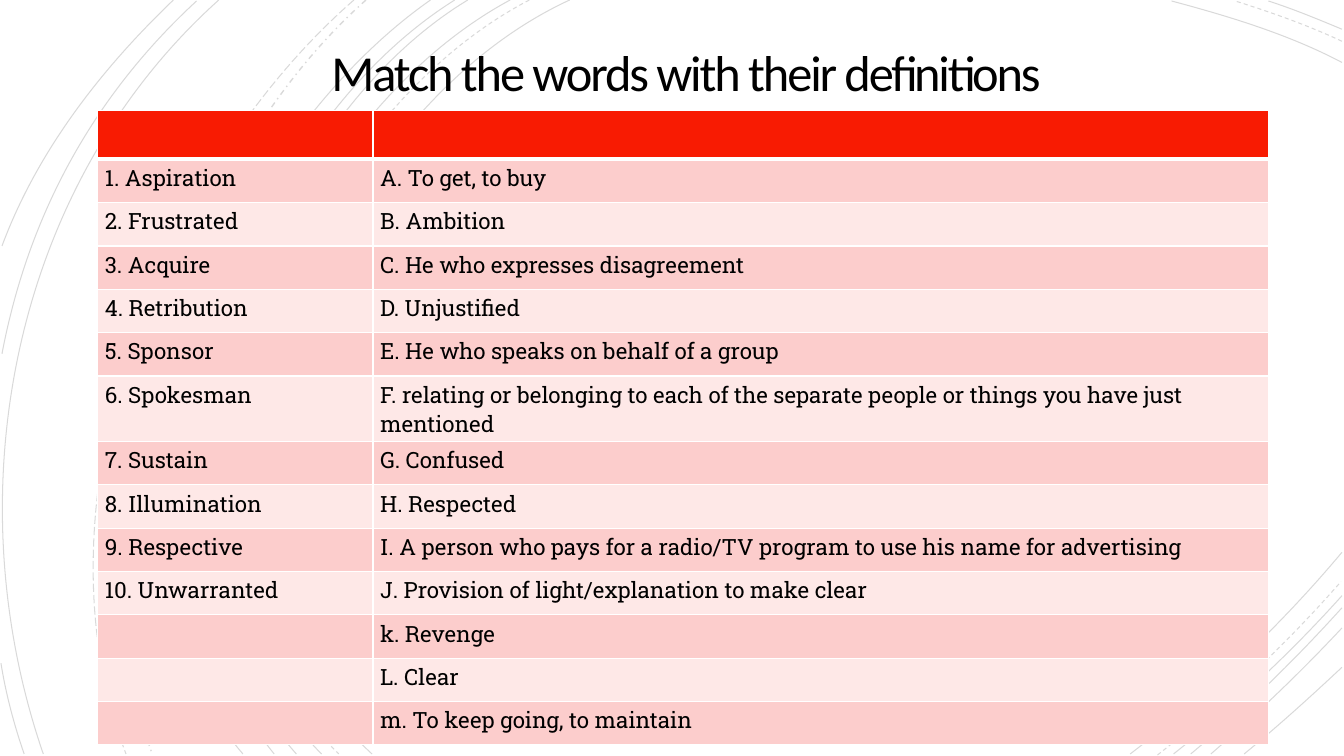
import pptx
import pptx.dml.color
import pptx.enum.dml
import pptx.enum.shapes
import pptx.enum.text
import pptx.oxml
import pptx.oxml.ns
import pptx.util

TITLE = "Match the words with their definitions"
WORDS = ["Aspiration", "Frustrated", "Acquire", "Retribution", "Sponsor",
         "Spokesman", "Sustain", "Illumination", "Respective", "Unwarranted"]
DEFINITIONS = [
    "A. To get, to buy",
    "B. Ambition",
    "C. He who expresses disagreement",
    "D. Unjustified",
    "E. He who speaks on behalf of a group",
    "F. relating or belonging to each of the separate people or things you have just mentioned",
    "G. Confused",
    "H. Respected",
    "I. A person who pays for a radio/TV program to use his name for advertising",
    "J. Provision of light/explanation to make clear",
    "k. Revenge",
    "L. Clear",
    "m. To keep going, to maintain",
]

# Background arcs by dash style: start, two control points and end, in px
ARCS = {
    "SOLID": [
        ((565, 0), (315, 115), (143, 540), (369, 748)),
        ((1331, 62), (1278, 34), (1218, 16), (1162, 1)),
        ((1121, 748), (1197, 690), (1269, 622), (1331, 548)),
        ((506, 0), (270, 127), (110, 537), (319, 748)),
        ((1331, 29), (1307, 19), (1283, 9), (1258, 1)),
        ((1164, 748), (1223, 701), (1280, 648), (1331, 591)),
        ((464, 0), (244, 133), (110, 541), (294, 748)),
        ((1181, 748), (1234, 704), (1284, 655), (1331, 603)),
        ((451, 0), (231, 138), (97, 533), (272, 748)),
        ((1201, 748), (1246, 709), (1290, 667), (1331, 623)),
        ((427, 0), (217, 147), (53, 529), (241, 748)),
        ((1234, 748), (1267, 721), (1299, 692), (1331, 662)),
        ((217, 0), (11, 185), (-46, 490), (43, 748)),
        ((195, 1), (92, 96), (28, 214), (2, 351)),
        ((1, 658), (6, 689), (14, 719), (24, 748)),
        ((172, 0), (100, 69), (37, 150), (2, 244)),
    ],
    "DASH": [
        ((525, 0), (285, 125), (123, 537), (336, 748)),
        ((1331, 41), (1297, 25), (1260, 12), (1225, 1)),
        ((1148, 749), (1213, 698), (1275, 640), (1330, 577)),
    ],
    "DASH_DOT": [((363, 0), (176, 166), (65, 509), (151, 748))],
    "LONG_DASH": [((351, 0), (157, 169), (29, 499), (125, 748))],
}
ARC_OPACITY = 15

PX = 9144  # 100 px to the inch
PAGE_SIZE = (1333, 750)
TITLE_BOX = (206, 48, 949, 55)
TABLE_AT = (97, 110)
COLUMN_WIDTHS = (273, 888)
HEADER_HEIGHT, ROW_HEIGHT, TWO_LINE_HEIGHT = 48, 43, 65
LINE_LENGTH = 80  # characters that fit on one line of a definition
MARGINS = {"margin_left": 7, "margin_top": 4, "margin_right": 7, "margin_bottom": 4}
BLACK, WHITE, HEADER_RED = "000000", "FFFFFF", "F81B02"
BANDS = ("FCCDCC", "FEE8E7")
TITLE_FONT = {"name": "Calibri", "size": pptx.util.Pt(36)}
CELL_FONT = {"name": "Roboto Slab", "size": pptx.util.Pt(16)}


def px(length):
    return pptx.util.Emu(length * PX)


def color(hex_text):
    return pptx.dml.color.RGBColor.from_string(hex_text)


def set_all(target, values):
    for name, value in values.items():
        setattr(target, name, value)


def write(para, text, font):
    span = para.add_run()
    span.text = text
    set_all(span.font, font)
    span.font.color.rgb = color(BLACK)
    return span


def add_backdrop(page):
    backdrop = page.shapes.add_shape(
        pptx.enum.shapes.MSO_SHAPE.RECTANGLE, 0, 0, *map(px, PAGE_SIZE))
    backdrop.shadow.inherit = False
    backdrop.fill.solid()
    backdrop.fill.fore_color.rgb = color(WHITE)
    backdrop.line.fill.background()


def draw_arc(page, corners, dash):
    start, *rest = corners
    builder = page.shapes.build_freeform(*start, scale=PX)
    builder.add_line_segments(rest, close=False)
    arc = builder.convert_to_shape()
    # Turn the three straight segments into one cubic curve
    outline = arc._element.find(".//" + pptx.oxml.ns.qn("a:path"))
    curve = pptx.oxml.parse_xml(f'<a:cubicBezTo {pptx.oxml.ns.nsdecls("a")}/>')
    for segment in outline.findall(pptx.oxml.ns.qn("a:lnTo")):
        curve.append(segment[0])
        outline.remove(segment)
    outline.append(curve)

    arc.shadow.inherit = False
    arc.fill.background()
    arc.line.color.rgb = color(BLACK)
    set_all(arc.line, {
        "width": pptx.util.Pt(1 if dash == "DASH_DOT" else 0.75),
        "dash_style": pptx.enum.dml.MSO_LINE[dash],
    })
    ink = arc._element.spPr.find(".//" + pptx.oxml.ns.qn("a:srgbClr"))
    ink.append(pptx.oxml.parse_xml(
        f'<a:alpha {pptx.oxml.ns.nsdecls("a")} val="{ARC_OPACITY * 1000}"/>'))


def set_borders(cell, widths):
    """Give white borders; widths in points are for left, right, top, bottom."""
    properties = cell._tc.get_or_add_tcPr()
    for index, (side, width) in enumerate(zip("LRTB", widths)):
        properties.insert(index, pptx.oxml.parse_xml(
            f'<a:ln{side} {pptx.oxml.ns.nsdecls("a")} w="{pptx.util.Pt(width)}">'
            f'<a:solidFill><a:srgbClr val="{WHITE}"/></a:solidFill></a:ln{side}>'))


def add_title(page):
    box = page.shapes.add_textbox(*map(px, TITLE_BOX))
    set_all(box.text_frame, {
        "word_wrap": True, "margin_top": 0, "margin_bottom": 0,
        "vertical_anchor": pptx.enum.text.MSO_ANCHOR.MIDDLE,
    })
    para = box.text_frame.paragraphs[0]
    set_all(para, {"alignment": pptx.enum.text.PP_ALIGN.CENTER, "line_spacing": 0.85})
    span = write(para, TITLE, TITLE_FONT)
    span.font._element.set("spc", "-150")


def add_word_table(page):
    numbered = [f"{number}. {word}" for number, word in enumerate(WORDS, 1)]
    numbered += [""] * (len(DEFINITIONS) - len(WORDS))
    rows = [("", "")] + list(zip(numbered, DEFINITIONS))
    heights = [HEADER_HEIGHT] + [
        TWO_LINE_HEIGHT if len(text) > LINE_LENGTH else ROW_HEIGHT for text in DEFINITIONS]
    table = page.shapes.add_table(
        len(rows), len(COLUMN_WIDTHS),
        *map(px, (*TABLE_AT, sum(COLUMN_WIDTHS), sum(heights)))).table
    for column, width in zip(table.columns, COLUMN_WIDTHS):
        column.width = px(width)
    for r, texts in enumerate(rows):
        table.rows[r].height = px(heights[r])
        for c, text in enumerate(texts):
            cell = table.cell(r, c)
            set_all(cell, {name: px(value) for name, value in MARGINS.items()})
            cell.fill.solid()
            cell.fill.fore_color.rgb = color(BANDS[(r - 1) % 2] if r else HEADER_RED)
            # A thick rule parts the header from the rows
            set_borders(cell, (1, 1, 3 if r == 1 else 1, 3 if r == 0 else 1))
            if text:
                write(cell.text_frame.paragraphs[0], text, CELL_FONT)


def main():
    deck = pptx.Presentation()
    deck.slide_width, deck.slide_height = map(px, PAGE_SIZE)
    page = deck.slides.add_slide(deck.slide_layouts[6])
    add_backdrop(page)
    for dash, arcs in ARCS.items():
        for corners in arcs:
            draw_arc(page, corners, dash)
    add_title(page)
    add_word_table(page)
    deck.save("out.pptx")


if __name__ == "__main__":
    main()
